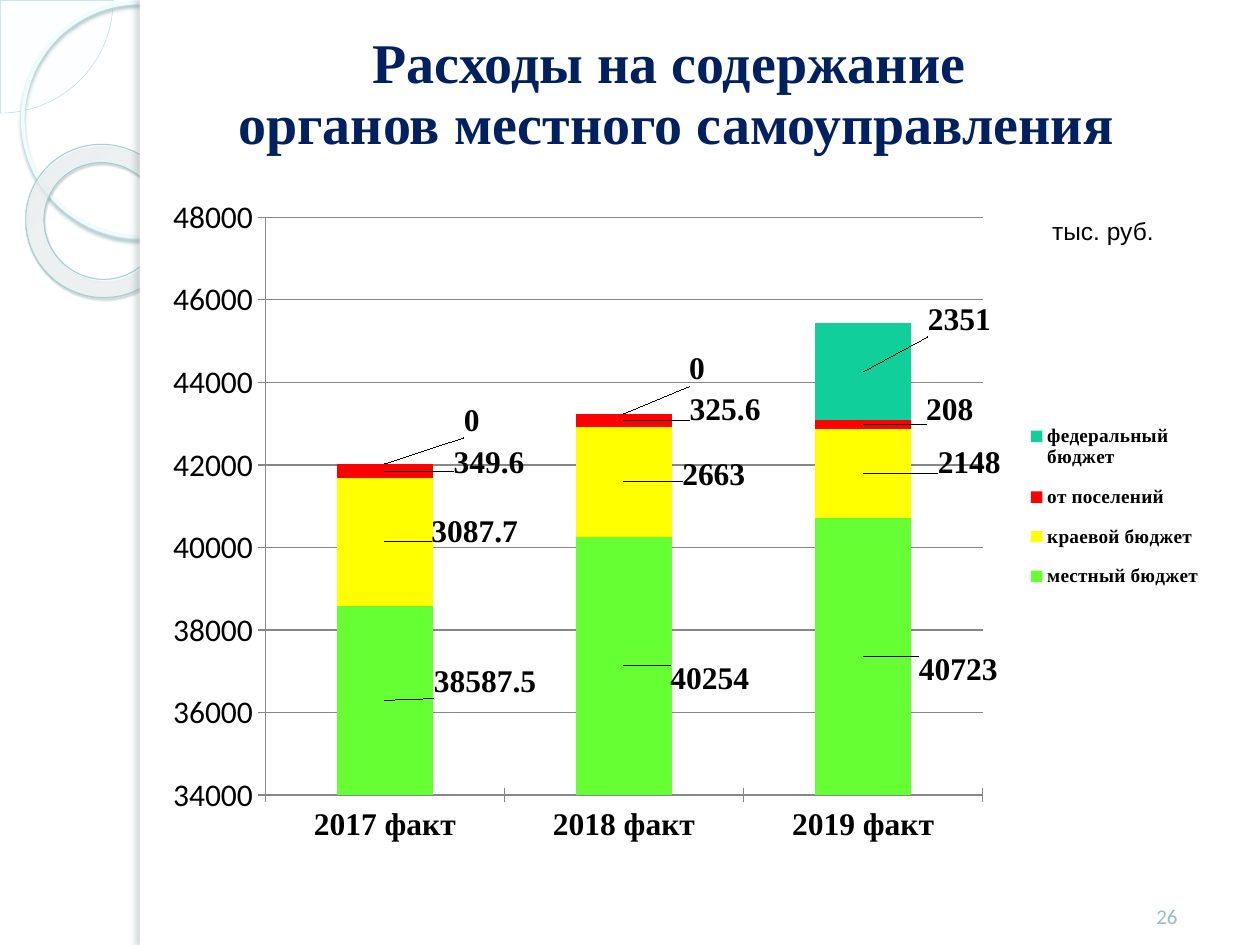
"""Build a slide with a stacked column chart of local government spending."""
from lxml import etree
from pptx import Presentation
from pptx.chart.data import CategoryChartData
from pptx.dml.color import RGBColor
from pptx.enum.chart import XL_CHART_TYPE, XL_LEGEND_POSITION, XL_TICK_MARK
from pptx.enum.shapes import MSO_SHAPE
from pptx.enum.text import MSO_ANCHOR, MSO_AUTO_SIZE, PP_ALIGN
from pptx.oxml import parse_xml
from pptx.oxml.ns import nsdecls, qn
from pptx.util import Cm, Pt

WHITE = RGBColor(0xFF, 0xFF, 0xFF)
BLACK = RGBColor(0, 0, 0)
NAVY = RGBColor(0x00, 0x20, 0x60)
PALE = RGBColor(0xF8, 0xFE, 0xFF)
PIE_LINE = RGBColor(0xAF, 0xDB, 0xE2)
RING_LINE = RGBColor(0xED, 0xFC, 0xFF)
DONUT_LINE = RGBColor(0xA1, 0xCF, 0xD6)
NUMBER = RGBColor(0x97, 0xBD, 0xC3)
GREY = RGBColor(0x87, 0x87, 0x87)
GREEN = RGBColor(0x66, 0xFF, 0x33)
YELLOW = RGBColor(0xFF, 0xFF, 0x00)
RED = RGBColor(0xFF, 0x00, 0x00)
TEAL = RGBColor(0x10, 0xCF, 0x9B)
SERIF = "Times New Roman"
CHART_W, CHART_H = 21.84, 13.97


def add_decor(kind, box, fill=None, line=None, width=0, shadow=None):
    sp = slide.shapes.add_shape(kind, *[Cm(v) for v in box])
    sp.shadow.inherit = False
    if fill is None:
        sp.fill.background()
    else:
        sp.fill.solid()
        sp.fill.fore_color.rgb = fill
    if line is None:
        sp.line.fill.background()
    else:
        sp.line.color.rgb = line
        sp.line.width = Pt(width)
    if shadow:
        color, alpha, blur, dist, angle = shadow
        sp._element.spPr.find(qn("a:effectLst")).append(parse_xml(
            f'<a:outerShdw {nsdecls("a")} blurRad="{Pt(blur)}" dist="{Pt(dist)}" '
            f'dir="{angle * 60000}" algn="ctr" rotWithShape="0"><a:srgbClr val="{color}">'
            f'<a:alpha val="{alpha * 1000}"/></a:srgbClr></a:outerShdw>'))
    return sp


def set_layout(parent, index, x, y, w=None, h=None, inner=False):
    for old in parent.findall(qn("c:layout")):
        parent.remove(old)
    layout = parse_xml(f'<c:layout {nsdecls("c")}><c:manualLayout/></c:layout>')
    values = []
    if inner:
        values.append(("layoutTarget", "inner"))
    if w:
        values += [("xMode", "edge"), ("yMode", "edge")]
    values += [("x", x / CHART_W), ("y", y / CHART_H)]
    if w:
        values += [("w", w / CHART_W), ("h", h / CHART_H)]
    for tag, value in values:
        etree.SubElement(layout[0], qn(f"c:{tag}")).set("val", str(value))
    parent.insert(index, layout)


prs = Presentation()
prs.slide_width, prs.slide_height = Cm(25.4), Cm(19.05)
slide = prs.slides.add_slide(prs.slide_layouts[5])

pie = add_decor(MSO_SHAPE.PIE, (-2.26, -2.26, 4.54, 4.54), PALE, PIE_LINE, 0.25)
pie.adjustments[0], pie.adjustments[1] = 0, 54
etree.SubElement(pie._element.spPr.find(".//" + qn("a:srgbClr")),
                 qn("a:alpha")).set("val", "33000")
add_decor(MSO_SHAPE.OVAL, (0.46, 0.05, 4.72, 4.72), None, RING_LINE, 2.15,
          ("9CB9BE", 85, 2, 2, 90))
donut = add_decor(MSO_SHAPE.DONUT, (0.51, 2.92, 3.12, 3.07), None, DONUT_LINE, 0.58,
                  ("4B5E61", 35, 1, 1.2, 75))
donut.rotation = 38.6
donut.adjustments[0] = 0.12
stops = "".join(
    f'<a:gs pos="{pos}000"><a:srgbClr val="{color}"><a:alpha val="{alpha}000"/></a:srgbClr></a:gs>'
    for pos, color, alpha in [(0, "F9FEFF", 70), (70, "FDFFFF", 55), (100, "9EF2FF", 60)])
no_fill = donut._element.spPr.find(qn("a:noFill"))
donut._element.spPr.replace(no_fill, parse_xml(
    f'<a:gradFill {nsdecls("a")} rotWithShape="1"><a:gsLst>{stops}</a:gsLst><a:path path="circle">'
    '<a:fillToRect l="-408000" t="-50000" r="508000" b="150000"/></a:path></a:gradFill>'))
add_decor(MSO_SHAPE.RECTANGLE, (2.82, 0, 22.58, 19.05), WHITE)
add_decor(MSO_SHAPE.RECTANGLE, (2.82, 0, 0.2, 19.05), WHITE,
          shadow=("6C7A7C", 25, 3, 3, 180))

title = slide.shapes.title
slide.shapes._spTree.append(title._element)
title.left, title.top, title.width, title.height = Cm(2.74), Cm(0.64), Cm(21.79), Cm(2.54)
tf = title.text_frame
tf.text = "Расходы на содержание \vорганов местного самоуправления"
tf.auto_size = MSO_AUTO_SIZE.NONE
tf.vertical_anchor = MSO_ANCHOR.MIDDLE
p = tf.paragraphs[0]
p.alignment = PP_ALIGN.CENTER
p.line_spacing = Pt(35)
p.font.name, p.font.size, p.font.bold = SERIF, Pt(32), True
p.font.color.rgb = NAVY

SERIES = [
    ("местный бюджет", (38587.5, 40254, 40723), GREEN,
     [(2.02, -0.38), (1.73, 0.26), (1.92, 0.27)]),
    ("краевой бюджет", (3087.7, 2663, 2148), YELLOW,
     [(1.81, -0.2), (1.81, -0.14), (2.14, -0.2)]),
    ("от поселений", (349.6, 325.6, 208), RED,
     [(2.1, -0.16), (2.04, -0.2), (1.75, -0.3)]),
    ("федеральный бюджет", (0, 0, 2351), TEAL,
     [(1.75, -0.87), (1.47, -0.89), (1.94, -1.05)]),
]
data = CategoryChartData()
data.categories = ["2017 факт", "2018 факт", "2019 факт"]
for name, values, color, offsets in SERIES:
    data.add_series(name, values)
chart = slide.shapes.add_chart(XL_CHART_TYPE.COLUMN_STACKED, Cm(2.97), Cm(3.81),
                               Cm(CHART_W), Cm(CHART_H), data).chart
chart.has_title = False
chart.font.name, chart.font.size = "Calibri", Pt(18)
chart.font.color.rgb = BLACK
set_layout(chart.element.find(".//" + qn("c:plotArea")), 0, 2.38, 0.57, 14.46, 11.65, True)

plot = chart.plots[0]
plot.gap_width, plot.overlap = 150, 100
plot.vary_by_categories = False
for ser, (name, values, color, offsets) in zip(plot.series, SERIES):
    ser.format.fill.solid()
    ser.format.fill.fore_color.rgb = color
    labels = ser.data_labels
    labels.show_value = True
    fonts = [labels.font] + [ser.points[i].data_label.font for i in range(len(values))]
    for font in fonts:
        font.name, font.size, font.bold = SERIF, Pt(18), True
        font.color.rgb = BLACK
all_offsets = [offset for row in SERIES for offset in row[3]]
for label, offset in zip(chart.element.iter(qn("c:dLbl")), all_offsets):
    set_layout(label, 1, *offset)

cat, val = chart.category_axis, chart.value_axis
cat.tick_labels.font.name, cat.tick_labels.font.bold = SERIF, True
cat.tick_labels.font.size = Pt(18)
val.minimum_scale, val.maximum_scale, val.major_unit = 34000, 48000, 2000
val.has_major_gridlines = True
val.major_gridlines.format.line.color.rgb = GREY
for axis in (cat, val):
    axis.major_tick_mark = XL_TICK_MARK.CROSS
    axis.format.line.color.rgb = GREY

chart.has_legend = True
legend = chart.legend
legend.position = XL_LEGEND_POSITION.RIGHT
legend.include_in_layout = False
legend.font.name, legend.font.size, legend.font.bold = SERIF, Pt(11), True
set_layout(chart.element.find(".//" + qn("c:legend")), 1, 17.6, 4.4, 3.8, 4)

NOTES = [
    ("26", (23.06, 17.53, 1.47, 1.32), "Calibri", 12, NUMBER, MSO_ANCHOR.BOTTOM),
    ("тыс. руб.", (20.96, 4.24, 2.57, 0.86), "Arial", 14, BLACK, MSO_ANCHOR.TOP),
]
for text, box, face, size, color, anchor in NOTES:
    tf = slide.shapes.add_textbox(*[Cm(v) for v in box]).text_frame
    tf.text = text
    tf.word_wrap = False
    tf.vertical_anchor = anchor
    p = tf.paragraphs[0]
    p.font.name, p.font.size = face, Pt(size)
    p.font.color.rgb = color

prs.save("out.pptx")
